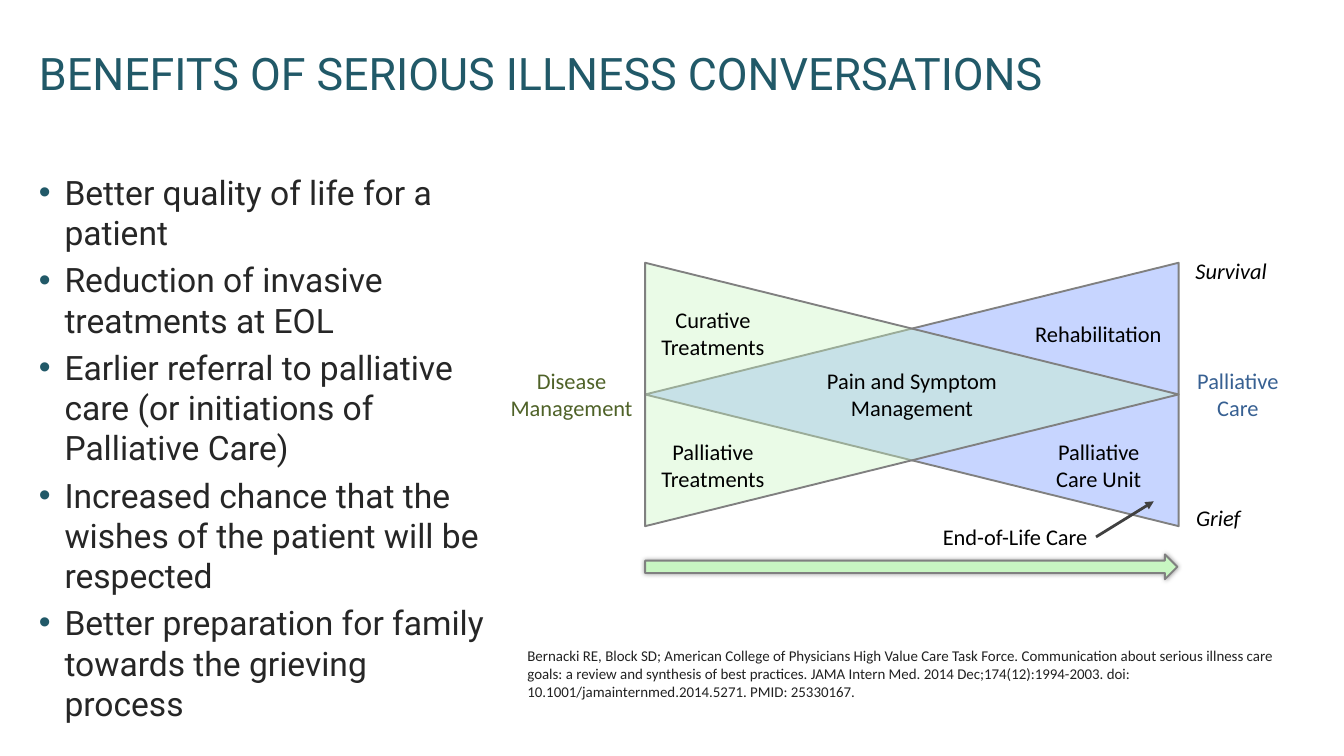
from lxml.etree import SubElement
from pptx import Presentation
from pptx.dml.color import RGBColor
from pptx.enum.shapes import MSO_CONNECTOR, MSO_SHAPE
from pptx.enum.text import MSO_ANCHOR, MSO_AUTO_SIZE, PP_ALIGN
from pptx.oxml.ns import qn
from pptx.util import Inches, Pt

TEAL = "215968"
BLACK = "000000"
GREEN = "C8F6C2"


def colour(value):
    return RGBColor.from_string(value)


def style(para, font, size, value, align=PP_ALIGN.LEFT, italic=False):
    para.alignment = align
    for span in para.runs:
        span.font.name = font
        span.font.size = Pt(size)
        span.font.color.rgb = colour(value)
        span.font.italic = italic


deck = Presentation()
deck.slide_width, deck.slide_height = Inches(20), Inches(11.25)
page = deck.slides.add_slide(deck.slide_layouts[1])

# Title
title = page.shapes.title
title.left, title.top = Inches(0.48), Inches(0.46)
title.width, title.height = Inches(15.19), Inches(1.25)
frame = title.text_frame
frame.text = "BENEFITS OF SERIOUS ILLNESS CONVERSATIONS"
frame.auto_size = MSO_AUTO_SIZE.NONE
frame.vertical_anchor = MSO_ANCHOR.MIDDLE
frame.margin_left = frame.margin_right = Inches(0.1)
frame.margin_top = frame.margin_bottom = Inches(0.1)
style(frame.paragraphs[0], "Roboto", 48, TEAL)

# Bulleted list of benefits
benefits = [
    "Better quality of life for a patient",
    "Reduction of invasive treatments at EOL",
    "Earlier referral to palliative care (or initiations of Palliative Care)",
    "Increased chance that the wishes of the patient will be respected",
    "Better preparation for family towards the grieving process",
]
body = page.placeholders[1]
body.left, body.top = Inches(0.48), Inches(2.51)
body.width, body.height = Inches(6.94), Inches(7.92)
frame = body.text_frame
frame.text = "\n".join(benefits)
frame.auto_size = MSO_AUTO_SIZE.NONE
for index, para in enumerate(frame.paragraphs):
    para.space_before = Pt(7.2 if index else 0)
    properties = para._p.get_or_add_pPr()
    properties.set("marL", str(Inches(0.38)))
    properties.set("indent", str(-Inches(0.38)))
    bullet_colour = SubElement(properties, qn("a:buClr"))
    SubElement(bullet_colour, qn("a:srgbClr"), val=TEAL)
    SubElement(properties, qn("a:buFont"), typeface="Arial")
    SubElement(properties, qn("a:buChar"), char="•")
    style(para, "Roboto", 36, "262626")

diagram = page.shapes.add_group_shape()

# Overlapping triangles: palliative care points left, disease management right
for rotation, fill, opacity in [(270, "BDCEFF", 84), (90, GREEN, 38)]:
    triangle = diagram.shapes.add_shape(
        MSO_SHAPE.ISOSCELES_TRIANGLE, Inches(11.61), Inches(1.9), Inches(3.92), Inches(7.94))
    triangle.rotation = rotation
    triangle.shadow.inherit = False
    triangle.fill.solid()
    triangle.fill.fore_color.rgb = colour(fill)
    fill_colour = triangle._element.spPr.find(qn("a:solidFill"))[0]
    SubElement(fill_colour, qn("a:alpha"), val=str(opacity * 1000))
    triangle.line.color.rgb = colour("808080")
    triangle.line.width = Pt(2)

# Time arrow with a soft shadow
arrow = diagram.shapes.add_shape(
    MSO_SHAPE.RIGHT_ARROW, Inches(9.6), Inches(8.25), Inches(7.92), Inches(0.37))
arrow.fill.solid()
arrow.fill.fore_color.rgb = colour(GREEN)
arrow.line.color.rgb = colour("808080")
arrow.line.width = Pt(2)
effects = SubElement(arrow._element.spPr, qn("a:effectLst"))
shadow = SubElement(effects, qn("a:outerShdw"), blurRad=str(Pt(5)), dist="0", dir="0")
shadow_colour = SubElement(shadow, qn("a:srgbClr"), val=BLACK)
SubElement(shadow_colour, qn("a:alpha"), val="40000")

# Diagram labels: text, left, top, width, height, colour, italic
labels = [
    ("Disease Management", 7.42, 5.42, 2.17, 0.91, "4F6228", False),
    ("Curative Treatments", 9.71, 4.51, 1.8, 0.91, BLACK, False),
    ("Palliative Treatments", 9.71, 6.47, 1.8, 0.91, BLACK, False),
    ("Pain and Symptom Management", 11.78, 5.42, 3.58, 0.91, BLACK, False),
    ("Rehabilitation", 15.18, 4.71, 2.33, 0.5, BLACK, False),
    ("Palliative Care Unit", 15.45, 6.47, 1.8, 0.91, BLACK, False),
    ("Survival", 17.42, 3.78, 1.8, 0.5, BLACK, True),
    ("Grief", 17.52, 7.46, 1.22, 0.5, BLACK, True),
    ("Palliative Care", 17.61, 5.42, 1.62, 0.91, "376092", False),
    ("End-of-Life Care", 13.9, 7.74, 2.41, 0.5, BLACK, False),
]
for text, left, top, width, height, value, italic in labels:
    label = diagram.shapes.add_textbox(Inches(left), Inches(top), Inches(width), Inches(height))
    label.text_frame.word_wrap = True
    label.text_frame.text = text
    style(label.text_frame.paragraphs[0], "Calibri", 24, value, PP_ALIGN.CENTER, italic)

# Pointer from the last label, End-of-Life Care, to the wide end
pointer = diagram.shapes.add_connector(
    MSO_CONNECTOR.STRAIGHT, Inches(16.31), Inches(7.99), Inches(17.17), Inches(7.46))
pointer.begin_connect(label, 3)
pointer.line.color.rgb = colour("404040")
pointer.line.width = Pt(3)
SubElement(pointer.line._get_or_add_ln(), qn("a:tailEnd"), type="triangle")
SubElement(pointer._element.spPr, qn("a:effectLst"))

# Citation
citation = page.shapes.add_textbox(Inches(7.75), Inches(9.57), Inches(11.46), Inches(0.91))
citation.text_frame.word_wrap = True
citation.text_frame.text = (
    "Bernacki RE, Block SD; American College of Physicians High Value Care Task Force. "
    "Communication about serious illness care goals: a review and synthesis of best practices. "
    "JAMA Intern Med. 2014 Dec;174(12):1994-2003. doi: 10.1001/jamainternmed.2014.5271. "
    "PMID: 25330167.")
style(citation.text_frame.paragraphs[0], "Calibri", 16, "212121")

deck.save("out.pptx")
